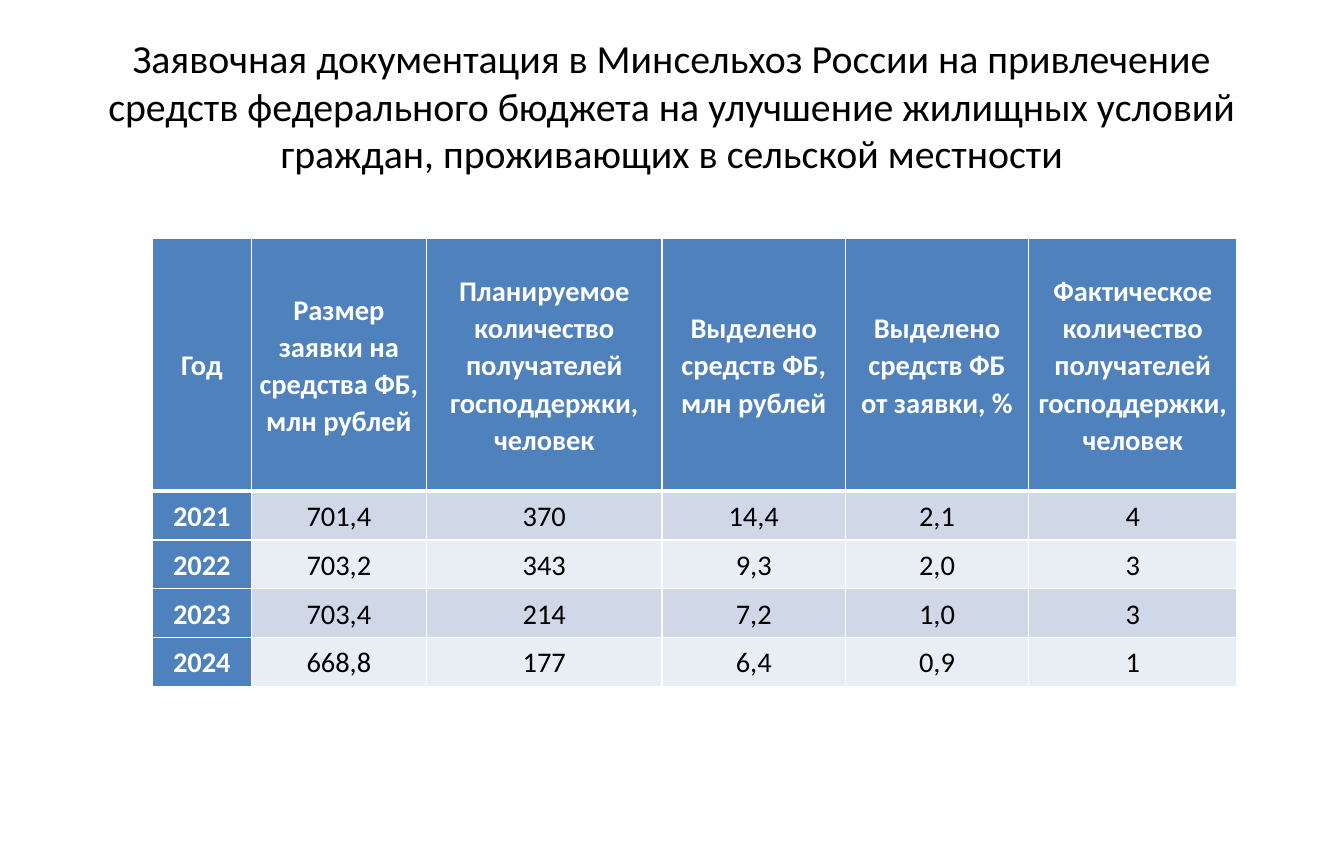
from lxml import etree
from pptx import Presentation
from pptx.dml.color import RGBColor
from pptx.enum import text
from pptx.oxml import ns
from pptx.util import Cm, Pt

TITLE = ("Заявочная документация в Минсельхоз России на привлечение средств "
         "федерального бюджета на улучшение жилищных условий граждан, "
         "проживающих в сельской местности")
ROWS = [
    ("Год",
     "Размер заявки на средства ФБ,\nмлн рублей",
     "Планируемое количество получателей господдержки, человек",
     "Выделено средств ФБ, млн рублей",
     "Выделено средств ФБ от заявки, %",
     "Фактическое количество получателей господдержки, человек"),
    ("2021", "701,4", "370", "14,4", "2,1", "4"),
    ("2022", "703,2", "343", "9,3", "2,0", "3"),
    ("2023", "703,4", "214", "7,2", "1,0", "3"),
    ("2024", "668,8", "177", "6,4", "0,9", "1"),
]
COL_WIDTHS = [2.21, 3.91, 5.26, 4.09, 4.09, 4.65]
HEADER_HEIGHT, ROW_HEIGHT = 5.64, 1.09

FONT = "Calibri"
BLACK = RGBColor(0x00, 0x00, 0x00)
WHITE = RGBColor(0xFF, 0xFF, 0xFF)
BLUE = RGBColor(0x4F, 0x81, 0xBD)
BANDS = [RGBColor(0xD0, 0xD8, 0xE8), RGBColor(0xE9, 0xED, 0xF4)]


def write(tf, content, size, color=BLACK, bold=False, spacing=None):
    """Fill a text frame with centred paragraphs, one per line of content."""
    tf.text = content
    for p in tf.paragraphs:
        p.alignment = text.PP_ALIGN.CENTER
        p.line_spacing = spacing
        for r in p.runs:
            r.font.name = FONT
            r.font.size = Pt(size)
            r.font.bold = bold
            r.font.color.rgb = color


def set_borders(cell, **widths):
    """Draw white cell borders; widths in points are keyed L, R, T, B."""
    tc_pr = cell._tc.get_or_add_tcPr()
    for side, width in widths.items():
        ln = etree.SubElement(tc_pr, ns.qn(f"a:ln{side}"), w=str(Pt(width)))
        fill = etree.SubElement(ln, ns.qn("a:solidFill"))
        etree.SubElement(fill, ns.qn("a:srgbClr"), val=str(WHITE))


def add_title(s):
    sp = s.shapes.title
    sp.left, sp.top, sp.width, sp.height = Cm(1.5), Cm(0.76), Cm(27), Cm(3.18)
    tf = sp.text_frame
    tf.word_wrap = True
    tf.auto_size = text.MSO_AUTO_SIZE.NONE
    tf.vertical_anchor = text.MSO_ANCHOR.MIDDLE
    write(tf, TITLE, 25.2)


def add_funding_table(s):
    heights = [HEADER_HEIGHT] + [ROW_HEIGHT] * (len(ROWS) - 1)
    table = s.shapes.add_table(len(ROWS), len(COL_WIDTHS), Cm(3.4), Cm(5.33),
                               Cm(sum(COL_WIDTHS)), Cm(sum(heights))).table
    table.first_col = True
    for col, width in zip(table.columns, COL_WIDTHS):
        col.width = Cm(width)
    for i, (row, height) in enumerate(zip(table.rows, heights)):
        row.height = Cm(height)
        for j, cell in enumerate(row.cells):
            heading = i == 0 or j == 0
            cell.margin_left = cell.margin_right = Cm(0.18)
            cell.margin_top = cell.margin_bottom = 0
            cell.vertical_anchor = text.MSO_ANCHOR.MIDDLE
            set_borders(cell, L=1, R=1, T=3 if i == 1 else 1, B=3 if i == 0 else 1)
            cell.fill.solid()
            cell.fill.fore_color.rgb = BLUE if heading else BANDS[(i - 1) % 2]
            write(cell.text_frame, ROWS[i][j], 18, spacing=1.07,
                  color=WHITE if heading else BLACK, bold=heading)


def main():
    prs = Presentation()
    prs.slide_width, prs.slide_height = Cm(30), Cm(19.05)
    s = prs.slides.add_slide(prs.slide_layouts[5])
    add_title(s)
    add_funding_table(s)
    prs.save("out.pptx")


if __name__ == "__main__":
    main()
